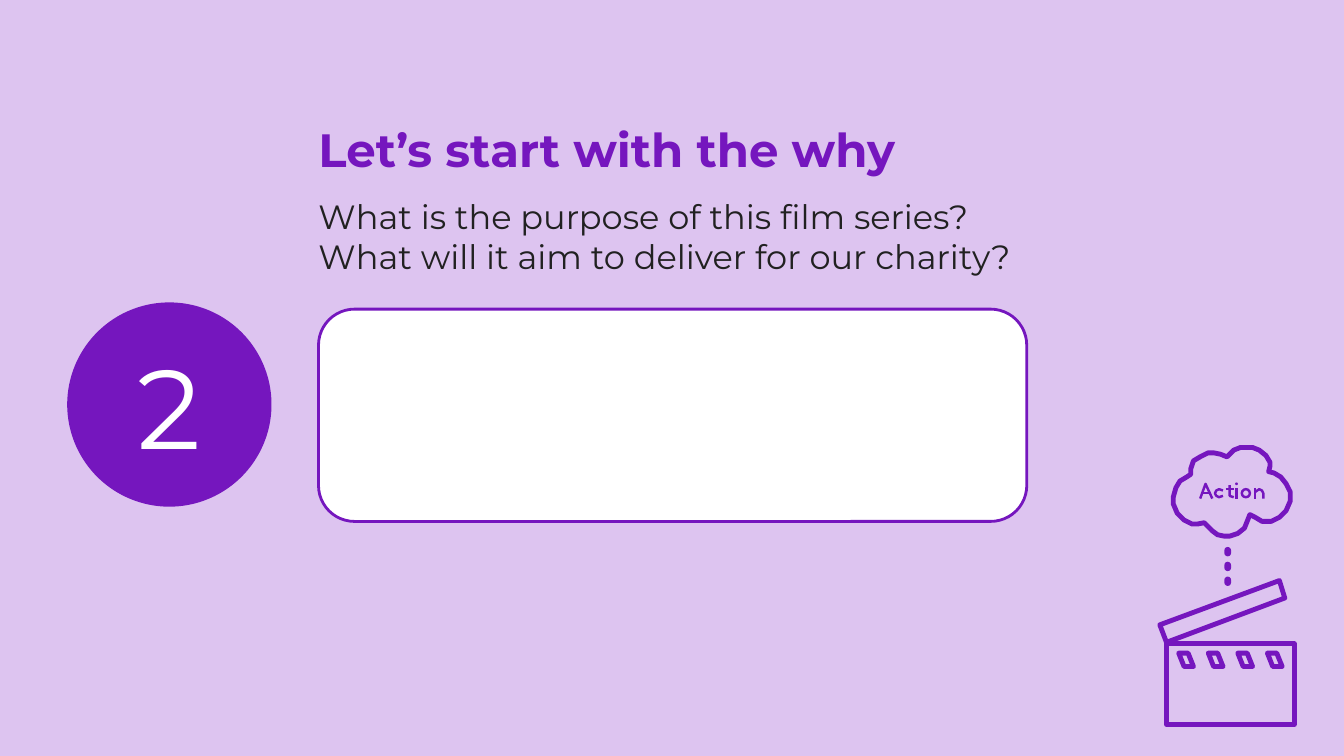
"""Build the question slide about the purpose of the film series."""
from lxml import etree
from pptx import Presentation
from pptx import util as u
from pptx.dml.color import RGBColor
from pptx.enum import shapes, text
from pptx.oxml.ns import qn

THEME = {
    "font": "Montserrat", "background": "DDC4F0", "accent": "7516BE",
    "body": "212121", "white": "FFFFFF",
    "number_size": 60, "title_size": 25, "body_size": 18,
    "box_line": 1.5, "icon_line": 2.6, "letter_line": 1.3,
}
NUMBER = "2"
TITLE = "Let’s start with the why"
QUESTIONS = ["What is the purpose of this film series?",
             "What will it aim to deliver for our charity?"]

CLOUD = [
    (9.28, 3.33), (9.32, 3.33), (9.37, 3.35), (9.42, 3.39), (9.45, 3.44),
    (9.45, 3.47), (9.44, 3.51), (9.48, 3.52), (9.53, 3.55), (9.57, 3.6),
    (9.6, 3.66), (9.6, 3.73), (9.57, 3.8), (9.52, 3.85), (9.46, 3.88),
    (9.39, 3.88), (9.34, 3.85), (9.3, 3.83), (9.28, 3.88), (9.26, 3.93),
    (9.21, 3.97), (9.15, 3.99), (9.11, 3.99), (9.06, 3.98), (9.02, 3.95),
    (8.98, 3.91), (8.96, 3.89), (8.91, 3.9), (8.87, 3.9), (8.81, 3.87),
    (8.76, 3.82), (8.73, 3.75), (8.73, 3.7), (8.75, 3.63), (8.78, 3.58),
    (8.83, 3.55), (8.86, 3.53), (8.86, 3.49), (8.88, 3.43), (8.93, 3.4),
    (8.99, 3.37), (9.03, 3.37), (9.08, 3.38), (9.13, 3.4), (9.16, 3.37),
    (9.18, 3.35), (9.23, 3.33),
]
CLAPPER_ARM = [(9.52, 4.32), (9.56, 4.45), (8.68, 4.78), (8.63, 4.65)]
CLAPPER_BOARD = [(8.68, 4.79), (9.63, 4.79), (9.63, 5.39), (8.68, 5.39)]
STRIPE = [(8.77, 4.86), (8.84, 4.86), (8.88, 4.96), (8.81, 4.96)]
STRIPE_COUNT, STRIPE_STEP = 4, 0.22
DOT, DOT_COUNT, DOT_STEP = (9.11, 4.07, 0.05, 0.07), 3, 0.11
LETTERS = {
    "A": [[(8.93, 3.71), (8.97, 3.6), (9.02, 3.71)], [(8.94, 3.67), (9.01, 3.67)]],
    "c": [[(9.1, 3.65), (9.07, 3.64), (9.05, 3.65), (9.04, 3.67), (9.05, 3.69),
           (9.07, 3.7), (9.1, 3.69)]],
    "t": [[(9.15, 3.61), (9.15, 3.69), (9.18, 3.7)], [(9.12, 3.64), (9.18, 3.64)]],
    "i": [[(9.2, 3.63), (9.2, 3.71)]],
    "n": [[(9.34, 3.63), (9.34, 3.71)],
          [(9.34, 3.66), (9.37, 3.64), (9.39, 3.65), (9.4, 3.67), (9.4, 3.71)]],
}
LETTER_O = (9.24, 3.64, 0.06, 0.06)
LETTER_I_DOT = (9.19, 3.59, 0.02, 0.02)


def color(name):
    return RGBColor.from_string(THEME[name])


def paint(shape, fill=None, line=None, width=None):
    shape.shadow.inherit = False
    if fill:
        shape.fill.solid()
        shape.fill.fore_color.rgb = color(fill)
    else:
        shape.fill.background()
    if line:
        shape.line.color.rgb = color(line)
        shape.line.width = u.Pt(THEME[width])
    else:
        shape.line.fill.background()


def add_preset(slide, kind, box, adjustment=None, **style):
    shape = slide.shapes.add_shape(kind, *map(u.Inches, box))
    if adjustment is not None:
        shape.adjustments[0] = adjustment
    paint(shape, **style)
    return shape


def add_outline(slide, strokes, width, close):
    contours = [[(u.Inches(x), u.Inches(y)) for x, y in stroke] for stroke in strokes]
    builder = slide.shapes.build_freeform(*contours[0][0], scale=1.0)
    for index, contour in enumerate(contours):
        if index:
            builder.move_to(*contour[0])
        builder.add_line_segments(contour[1:], close=close)
    shape = builder.convert_to_shape()
    paint(shape, line="accent", width=width)
    etree.SubElement(shape.line._get_or_add_ln(), qn("a:round"))


def set_frame(shape, anchor, inset=0):
    frame = shape.text_frame
    margins = {f"margin_{side}": u.Inches(inset)
               for side in ("left", "top", "right", "bottom")}
    for name, value in {"word_wrap": True, "vertical_anchor": anchor, **margins}.items():
        setattr(frame, name, value)
    return frame


def write(paragraph, words, size, ink, bold=False, **layout):
    paragraph.text = words
    for name, value in layout.items():
        setattr(paragraph, name, value)
    font = {"name": THEME["font"], "size": u.Pt(THEME[size]), "bold": bold}
    for run in paragraph.runs:
        for name, value in font.items():
            setattr(run.font, name, value)
        run.font.color.rgb = color(ink)


def add_question(slide):
    circle = add_preset(slide, shapes.MSO_SHAPE.OVAL, (0.5, 2.25, 1.52, 1.52), fill="accent")
    frame = set_frame(circle, text.MSO_ANCHOR.MIDDLE, 0.1)
    write(frame.paragraphs[0], NUMBER, "number_size", "white",
          alignment=text.PP_ALIGN.CENTER)

    heading = slide.shapes.add_textbox(*map(u.Inches, (2.37, 0.9, 5.8, 2.12)))
    frame = set_frame(heading, text.MSO_ANCHOR.TOP)
    write(frame.paragraphs[0], TITLE, "title_size", "accent", bold=True)
    write(frame.add_paragraph(), "\v".join(QUESTIONS), "body_size", "body",
          space_before=u.Pt(10), space_after=u.Pt(10))

    add_preset(slide, shapes.MSO_SHAPE.ROUNDED_RECTANGLE, (2.37, 2.3, 5.27, 1.58), 0.17,
               fill="white", line="accent", width="box_line")


def add_clapperboard(slide):
    stripes = [[(x + STRIPE_STEP * index, y) for x, y in STRIPE]
               for index in range(STRIPE_COUNT)]
    for points in [CLAPPER_ARM, CLAPPER_BOARD, *stripes, CLOUD]:
        add_outline(slide, [points], "icon_line", close=True)
    for strokes in LETTERS.values():
        add_outline(slide, strokes, "letter_line", close=False)
    add_preset(slide, shapes.MSO_SHAPE.OVAL, LETTER_O, line="accent", width="letter_line")
    add_preset(slide, shapes.MSO_SHAPE.OVAL, LETTER_I_DOT, fill="accent")
    left, top, width, height = DOT
    for index in range(DOT_COUNT):
        add_preset(slide, shapes.MSO_SHAPE.ROUNDED_RECTANGLE,
                   (left, top + DOT_STEP * index, width, height), 0.5, fill="accent")


def main():
    presentation = Presentation()
    presentation.slide_width = u.Inches(10)
    presentation.slide_height = u.Inches(10 * 9 / 16)
    slide = presentation.slides.add_slide(presentation.slide_layouts[6])
    slide.background.fill.solid()
    slide.background.fill.fore_color.rgb = color("background")
    add_question(slide)
    add_clapperboard(slide)
    presentation.save("out.pptx")


if __name__ == "__main__":
    main()
